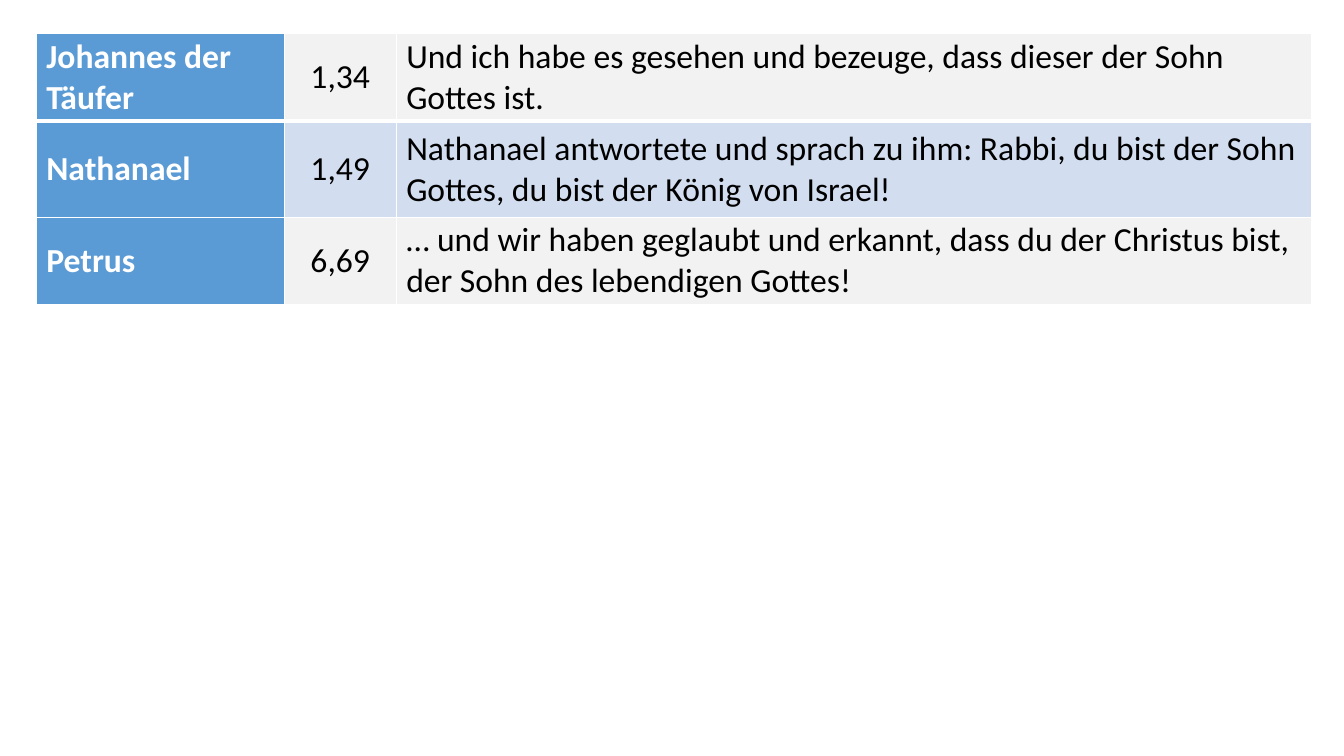
from lxml.etree import SubElement as Sub
from pptx import Presentation
from pptx.dml.color import RGBColor as RGB
from pptx.enum.text import MSO_ANCHOR as Anchor, PP_ALIGN as Align
from pptx.oxml.ns import qn
from pptx.util import Inches, Pt

WHITE = RGB(0xFF, 0xFF, 0xFF)
BLACK = RGB(0x00, 0x00, 0x00)
BLUE = RGB(0x5B, 0x9B, 0xD5)
PALE = RGB(0xD2, 0xDE, 0xEF)
GREY = RGB(0xF2, 0xF2, 0xF2)

WIDTHS = [2.46, 1.11, 9.08]
HEIGHTS = [0.87, 0.96, 0.86]
VERSES = [
    ("Johannes der Täufer", "1,34",
     "Und ich habe es gesehen und bezeuge, dass dieser der Sohn Gottes ist."),
    ("Nathanael", "1,49",
     "Nathanael antwortete und sprach zu ihm: Rabbi, du bist der Sohn Gottes, "
     "du bist der König von Israel!"),
    ("Petrus", "6,69",
     "… und wir haben geglaubt und erkannt, dass du der Christus bist, "
     "der Sohn des lebendigen Gottes!"),
]
ALIGNS = [Align.LEFT, Align.CENTER, Align.LEFT]
FORMAT = {
    "vertical_anchor": Anchor.MIDDLE,
    "margin_left": Inches(0.1),
    "margin_right": Inches(0.1),
    "margin_top": 0,
    "margin_bottom": 0,
}


def border(cell, side, width):
    line = Sub(cell._tc.get_or_add_tcPr(), qn("a:" + side), w=str(Pt(width)))
    fill = Sub(line, qn("a:solidFill"))
    Sub(fill, qn("a:srgbClr"), val=str(WHITE))


deck = Presentation()
deck.slide_width = Inches(13.33)
deck.slide_height = Inches(7.5)
slide = deck.slides.add_slide(deck.slide_layouts[6])

table = slide.shapes.add_table(
    len(VERSES), len(WIDTHS), Inches(0.36), Inches(0.33),
    Inches(sum(WIDTHS)), Inches(sum(HEIGHTS))).table
table.first_row = False
table.first_col = True
for col, width in zip(table.columns, WIDTHS):
    col.width = Inches(width)

for r, (verse, height) in enumerate(zip(VERSES, HEIGHTS)):
    table.rows[r].height = Inches(height)
    for c, text in enumerate(verse):
        cell = table.cell(r, c)
        for name, value in FORMAT.items():
            setattr(cell, name, value)
        border(cell, "lnL", 1)
        border(cell, "lnR", 1)
        border(cell, "lnT", 3 if r == 1 else 1)
        border(cell, "lnB", 3 if r == 0 else 1)
        head = c == 0
        cell.fill.solid()
        cell.fill.fore_color.rgb = BLUE if head else PALE if r % 2 else GREY
        para = cell.text_frame.paragraphs[0]
        para.alignment = ALIGNS[c]
        run = para.add_run()
        run.text = text
        for name, value in {"name": "Calibri", "size": Pt(24), "bold": head}.items():
            setattr(run.font, name, value)
        run.font.color.rgb = WHITE if head else BLACK

deck.save("out.pptx")
